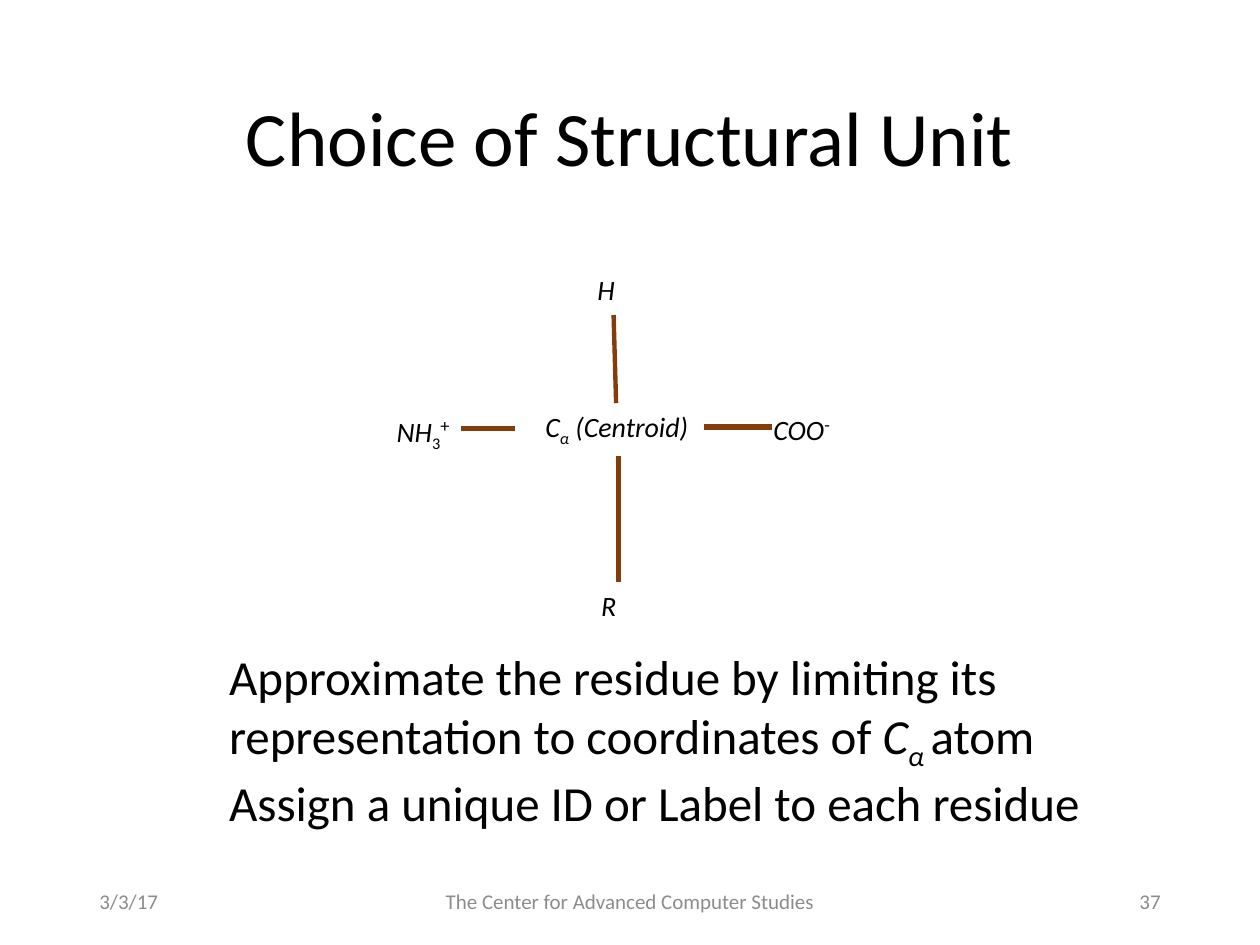
"""Build the slide on the choice of structural unit for a residue."""
from lxml.etree import SubElement
from pptx import Presentation
from pptx.dml.color import RGBColor
from pptx.enum.shapes import MSO_CONNECTOR
from pptx.enum.text import MSO_ANCHOR, PP_ALIGN
from pptx.oxml.ns import qn
from pptx.util import Inches, Pt

BLACK = RGBColor(0x00, 0x00, 0x00)
GRAY = RGBColor(0x8C, 0x8C, 0x8C)
BROWN = RGBColor(0x84, 0x3C, 0x0B)
FONT = "Calibri"
LEFT, CENTER, RIGHT = PP_ALIGN.LEFT, PP_ALIGN.CENTER, PP_ALIGN.RIGHT

presentation = Presentation()
presentation.slide_width = Inches(10)
presentation.slide_height = Inches(7.5)
slide = presentation.slides.add_slide(presentation.slide_layouts[6])


def format_run(run, size, color, italic=False, baseline=0):
    run.font.name = FONT
    run.font.size = Pt(size)
    run.font.italic = italic
    run.font.color.rgb = color
    if baseline:
        run.font._element.set("baseline", str(baseline * 1000))


def add_text(box, text, size, color=BLACK, align=LEFT, anchor=MSO_ANCHOR.TOP, wrap=True):
    shape = slide.shapes.add_textbox(*(Inches(value) for value in box))
    text_frame = shape.text_frame
    text_frame.text = text
    text_frame.word_wrap = wrap
    text_frame.vertical_anchor = anchor
    for paragraph in text_frame.paragraphs:
        paragraph.alignment = align
        for run in paragraph.runs:
            format_run(run, size, color)
    return text_frame


title = add_text((0.69, 0.4, 8.62, 1.45), "Choice of Structural Unit", 44,
                 align=CENTER, anchor=MSO_ANCHOR.MIDDLE)
title.paragraphs[0].line_spacing = 0.9

groups = [
    ((4.2, 3.2, 1.39, 0.37), CENTER, True,
     [("C", 16, True, 0), ("α", 16, True, -25), (" (Centroid)", 16, True, 0)]),
    ((3.05, 3.21, 0.67, 0.37), LEFT, False,
     [("NH", 16, True, 0), ("3", 16, False, -25), ("+", 18, False, 30)]),
    ((6.04, 3.2, 0.73, 0.37), LEFT, True,
     [("COO", 16, True, 0), ("-", 18, False, 30)]),
]
for box, align, wrap, parts in groups:
    paragraph = add_text(box, "", 16, align=align, wrap=wrap).paragraphs[0]
    for text, size, italic, baseline in parts:
        run = paragraph.add_run()
        run.text = text
        format_run(run, size, BLACK, italic, baseline)

for atom, left, top in [("H", 4.74, 2.16), ("R", 4.77, 4.67)]:
    text_frame = add_text((left, top, 0.19, 0.27), atom, 16, wrap=False)
    text_frame.margin_left = text_frame.margin_right = 0
    text_frame.margin_top = text_frame.margin_bottom = 0
    text_frame.paragraphs[0].runs[0].font.italic = True

bonds = [
    (4.89, 3.2, 4.87, 2.5, 2.5),
    (4.09, 3.4, 3.66, 3.4, 3),
    (5.59, 3.39, 6.13, 3.39, 3),
    (4.91, 3.62, 4.91, 4.62, 3),
]
for *ends, width in bonds:
    bond = slide.shapes.add_connector(MSO_CONNECTOR.STRAIGHT, *(Inches(value) for value in ends))
    bond.line.color.rgb = BROWN
    bond.line.width = Pt(width)
    SubElement(bond._element.spPr, qn("a:effectLst"))

summary = add_text(
    (1.72, 5.08, 7.03, 1.51),
    "Approximate the residue by limiting its\n"
    "representation to coordinates of \n"
    "Assign a unique ID or Label to each residue",
    28, wrap=False)
for text, italic, baseline in [("C", True, 0), ("α ", True, -25), ("atom", False, 0)]:
    run = summary.paragraphs[1].add_run()
    run.text = text
    format_run(run, 28, BLACK, italic, baseline)

footers = [
    ("3/3/17", 0.69, 2.25, LEFT),
    ("The Center for Advanced Computer Studies", 3.31, 3.38, CENTER),
    ("37", 7.06, 2.25, RIGHT),
]
for text, left, width, align in footers:
    add_text((left, 6.95, width, 0.4), text, 12, GRAY, align, MSO_ANCHOR.MIDDLE)

presentation.save("out.pptx")
